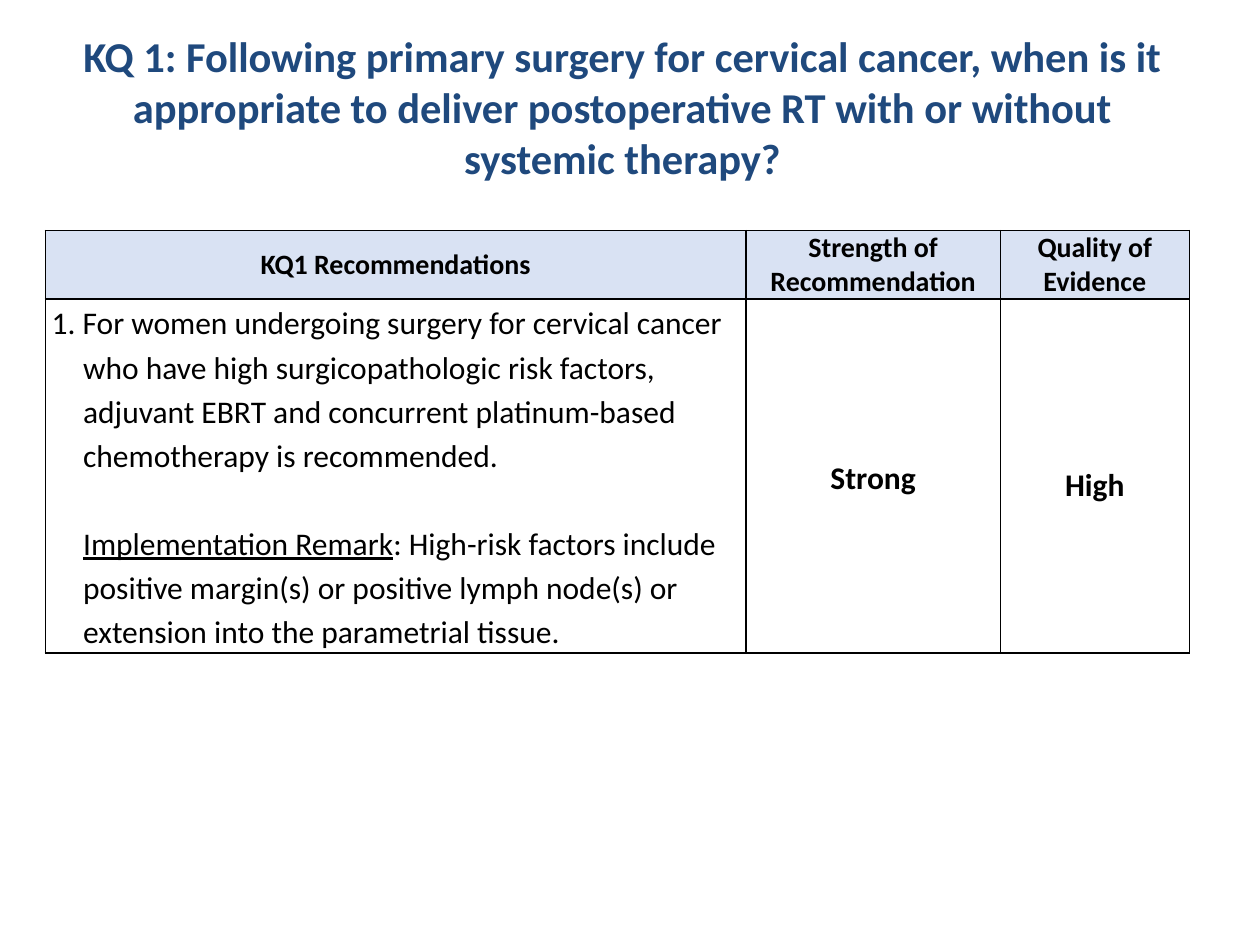
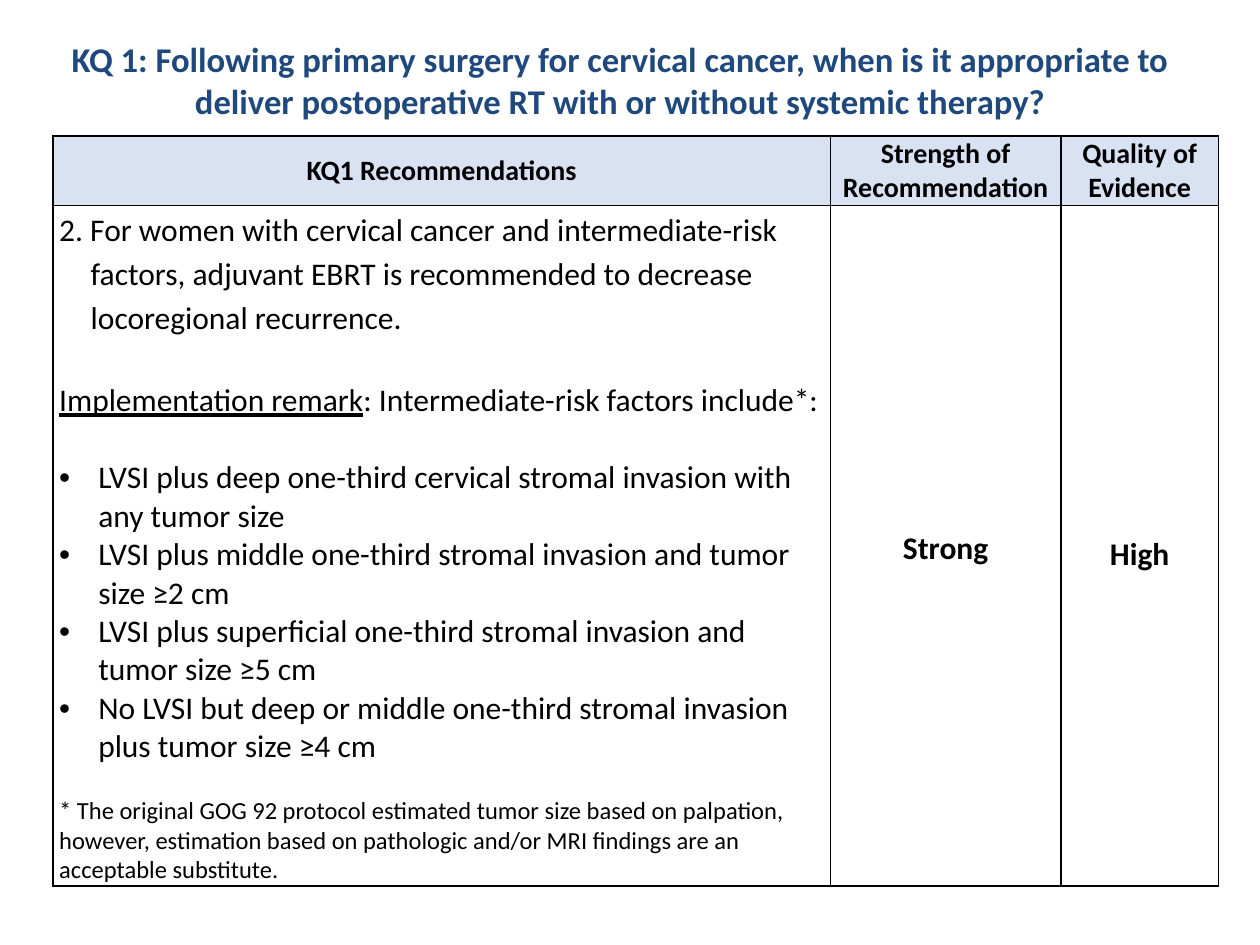
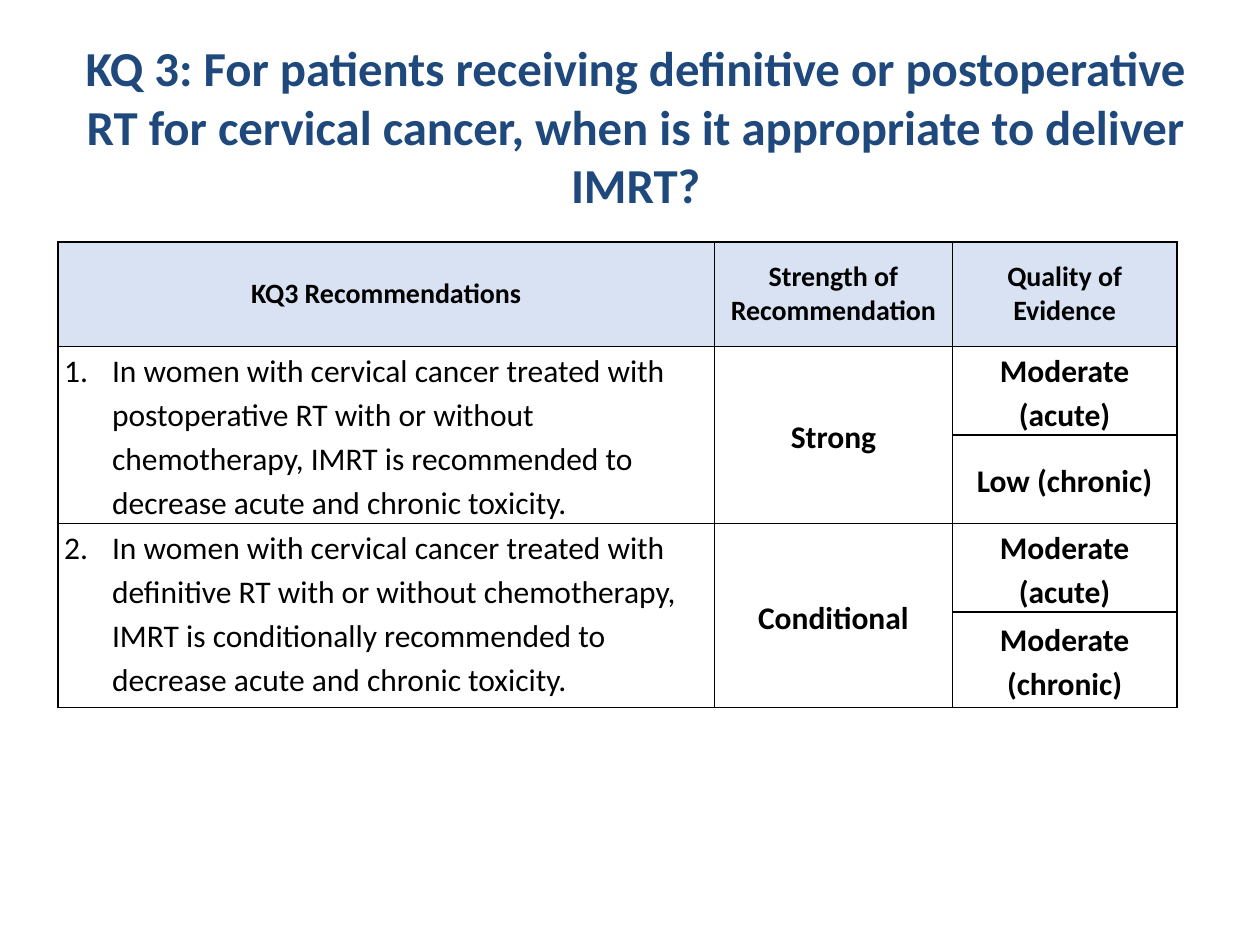
from dataclasses import dataclass

from lxml import etree
from pptx import Presentation
from pptx.dml.color import RGBColor
from pptx.enum.text import MSO_ANCHOR, MSO_AUTO_SIZE, PP_ALIGN
from pptx.oxml.ns import qn
from pptx.util import Inches, Pt


@dataclass(frozen=True)
class Theme:
    font: str = "Calibri"
    title: RGBColor = RGBColor(0x1F, 0x49, 0x7D)
    text: RGBColor = RGBColor(0, 0, 0)
    header_fill: RGBColor = RGBColor(0xD9, 0xE2, 0xF3)
    border: str = "000000"
    border_width: int = Pt(1)
    header_size: float = 16
    body_size: float = 18
    note_size: float = 14


THEME = Theme()


@dataclass
class Para:
    """A cell paragraph; lead is an underlined opening, before is in points."""
    text: str
    lead: str = ""
    size: float = THEME.body_size
    bold: bool = False
    align: PP_ALIGN = PP_ALIGN.LEFT
    spacing: float = 1.0
    before: float = 0
    indent: float = 0
    hanging: bool = True
    bullet: str = ""
    number: int = 0


def header(text):
    return [Para(text, size=THEME.header_size, bold=True, align=PP_ALIGN.CENTER)]


def rating(text, spacing=1.15):
    return [Para(text, bold=True, align=PP_ALIGN.CENTER, spacing=spacing)]


def headers(question):
    return [header(f"{question} Recommendations"),
            header("Strength of Recommendation"),
            header("Quality of Evidence")]


def style_run(r, size, color, bold, underline=False):
    r.font.name = THEME.font
    r.font.size = Pt(size)
    r.font.color.rgb = color
    r.font.bold = bold
    r.font.underline = underline


def set_list_format(p, para):
    pPr = p._p.get_or_add_pPr()
    pPr.set("marL", str(Inches(para.indent)))
    pPr.set("indent", str(-Inches(para.indent) if para.hanging else 0))
    if para.bullet:
        etree.SubElement(pPr, qn("a:buFont"), typeface="Arial")
        etree.SubElement(pPr, qn("a:buChar"), char=para.bullet)
    elif para.number:
        etree.SubElement(pPr, qn("a:buAutoNum"), type="arabicPeriod",
                         startAt=str(para.number))


def write_paragraph(p, para):
    set_list_format(p, para)
    p.alignment = para.align
    p.line_spacing = para.spacing
    p.space_before = Pt(para.before)
    for text, underline in ((para.lead, True), (para.text, False)):
        if text:
            r = p.add_run()
            r.text = text
            style_run(r, para.size, THEME.text, para.bold, underline)


def set_borders(cell):
    tcPr = cell._tc.get_or_add_tcPr()
    for side in ("lnL", "lnR", "lnT", "lnB"):
        ln = etree.SubElement(tcPr, qn(f"a:{side}"), w=str(THEME.border_width))
        fill = etree.SubElement(ln, qn("a:solidFill"))
        etree.SubElement(fill, qn("a:srgbClr"), val=THEME.border)


def format_cell(cell, is_header, anchor, inset):
    set_borders(cell)
    if is_header:
        cell.fill.solid()
        cell.fill.fore_color.rgb = THEME.header_fill
    else:
        cell.fill.background()
    cell.vertical_anchor = anchor
    cell.margin_left = cell.margin_right = Inches(inset)
    cell.margin_top = cell.margin_bottom = 0


def write_cell(cell, paras):
    tf = cell.text_frame
    for i, para in enumerate(paras):
        write_paragraph(tf.add_paragraph() if i else tf.paragraphs[0], para)


def add_table(slide, left, top, widths, heights, rows, header_inset=0.07):
    """Draw the rows; a None cell is merged into the cell above it."""
    table = slide.shapes.add_table(
        len(rows), len(widths), Inches(left), Inches(top),
        Inches(sum(widths)), Inches(sum(heights))).table
    table.horz_banding = False
    for column, width in zip(table.columns, widths):
        column.width = Inches(width)
    for row, height in zip(table.rows, heights):
        row.height = Inches(height)
    for i, row in enumerate(rows):
        for j, paras in enumerate(row):
            cell = table.cell(i, j)
            top_aligned = i and j == 0
            format_cell(cell, i == 0,
                        MSO_ANCHOR.TOP if top_aligned else MSO_ANCHOR.MIDDLE,
                        0.05 if i else header_inset)
            if paras is None:
                table.cell(i - 1, j).merge(cell)
            else:
                write_cell(cell, paras)


def add_slide(prs, title, size, left, top, width, height):
    slide = prs.slides.add_slide(prs.slide_layouts[5])
    sp = slide.shapes.title
    sp.left, sp.top = Inches(left), Inches(top)
    sp.width, sp.height = Inches(width), Inches(height)
    tf = sp.text_frame
    tf.text = title
    tf.word_wrap = True
    tf.auto_size = MSO_AUTO_SIZE.NONE
    tf.vertical_anchor = MSO_ANCHOR.TOP
    p = tf.paragraphs[0]
    p.alignment = PP_ALIGN.CENTER
    style_run(p.runs[0], size, THEME.title, True)
    return slide


KQ1 = ("KQ 1: Following primary surgery for cervical cancer, when is it "
       "appropriate to deliver postoperative RT with or without systemic therapy?")
KQ3 = ("KQ 3: For patients receiving definitive or postoperative RT for "
       "cervical cancer, when is it appropriate to deliver IMRT?")


def add_high_risk_slide(prs):
    slide = add_slide(prs, KQ1, 24.3, 0.44, 0.19, 9, 1.42)
    recommendation = [
        Para("1. For women undergoing surgery for cervical cancer who have high "
             "surgicopathologic risk factors, adjuvant EBRT and concurrent "
             "platinum-based chemotherapy is recommended.",
             spacing=1.15, indent=0.25),
        Para(": High-risk factors include positive margin(s) or positive lymph "
             "node(s) or extension into the parametrial tissue.",
             lead="Implementation Remark", spacing=1.15, before=25,
             indent=0.25, hanging=False),
    ]
    add_table(slide, 0.36, 1.83, [5.56, 2.02, 1.5], [0.54, 2.81],
              [headers("KQ1"),
               [recommendation, rating("Strong"), rating("High", 1.5)]])


def add_intermediate_risk_slide(prs):
    slide = add_slide(prs, KQ1, 19.8, 0.42, 0.25, 9, 1.42)
    risk_factors = [
        "LVSI plus deep one-third cervical stromal invasion with any tumor size",
        "LVSI plus middle one-third stromal invasion and tumor size ≥2 cm",
        "LVSI plus superficial one-third stromal invasion and tumor size ≥5 cm",
        "No LVSI but deep or middle one-third stromal invasion plus tumor size ≥4 cm",
    ]
    recommendation = [
        Para("2. For women with cervical cancer and intermediate-risk factors, "
             "adjuvant EBRT is recommended to decrease locoregional recurrence.",
             spacing=1.15, indent=0.25),
        Para(": Intermediate-risk factors include*:",
             lead="Implementation remark", before=25),
        *(Para(text, indent=0.31, bullet="•", before=0 if i else 22)
          for i, text in enumerate(risk_factors)),
        Para("* The original GOG 92 protocol estimated tumor size based on "
             "palpation, however, estimation based on pathologic and/or MRI "
             "findings are an acceptable substitute.",
             size=THEME.note_size, before=17),
    ]
    add_table(slide, 0.42, 1.08, [6.17, 1.83, 1.25], [0.55, 5.4],
              [headers("KQ1"),
               [recommendation, rating("Strong"), rating("High", 1.5)]])


def add_imrt_slide(prs):
    slide = add_slide(prs, KQ3, 27.9, 0.46, 0.25, 9.17, 1.82)
    postoperative, definitive = (
        [Para("In women with cervical cancer treated with " + text,
              spacing=1.15, indent=0.38, number=number)]
        for number, text in enumerate((
            "postoperative RT with or without chemotherapy, IMRT is "
            "recommended to decrease acute and chronic toxicity.",
            "definitive RT with or without chemotherapy, IMRT is conditionally "
            "recommended to decrease acute and chronic toxicity."), 1))
    add_table(slide, 0.46, 1.92, [5.21, 1.89, 1.78], [0.83, 0.7, 0.7, 0.7, 0.76],
              [headers("KQ3"),
               [postoperative, rating("Strong"), rating("Moderate (acute)")],
               [None, None, rating("Low (chronic)")],
               [definitive, rating("Conditional"), rating("Moderate (acute)")],
               [None, None, rating("Moderate (chronic)")]],
              header_inset=0.05)


def main():
    prs = Presentation()
    prs.slide_width, prs.slide_height = Inches(10), Inches(7.5)
    add_high_risk_slide(prs)
    add_intermediate_risk_slide(prs)
    add_imrt_slide(prs)
    prs.save("out.pptx")


if __name__ == "__main__":
    main()
